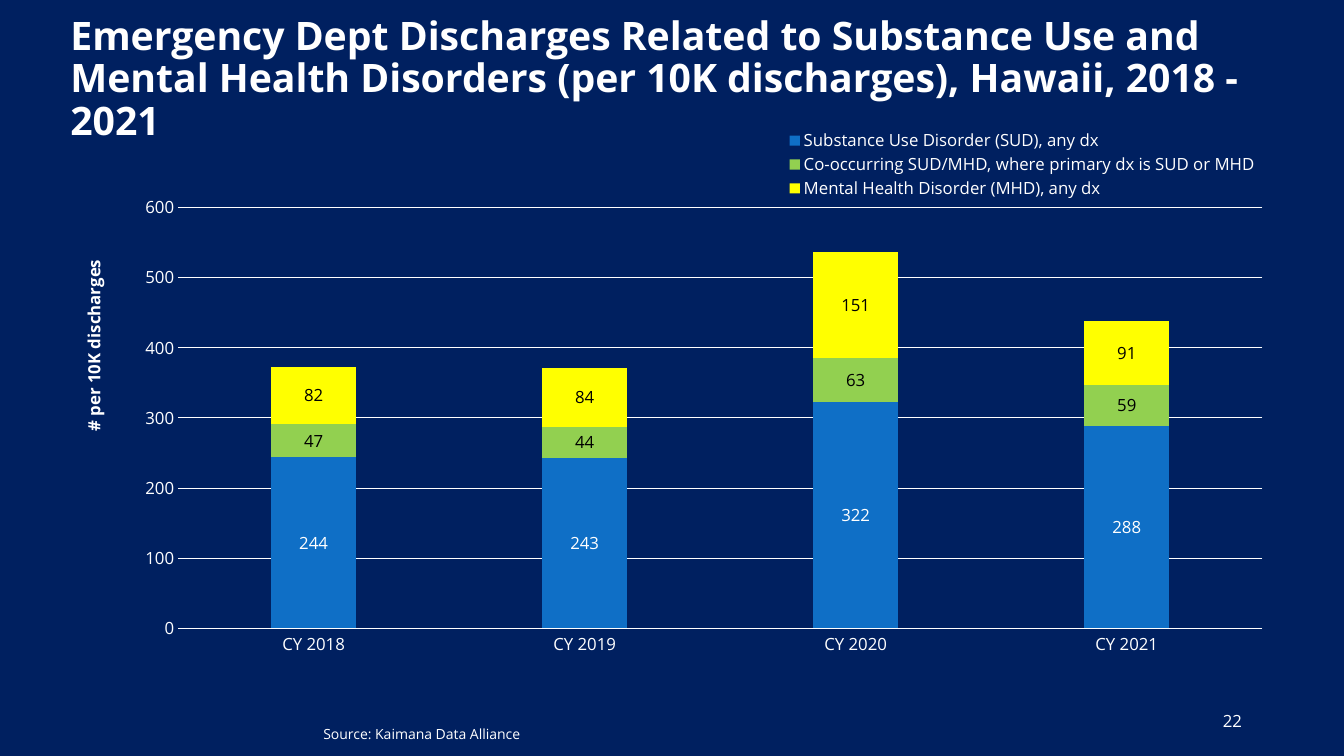
from lxml import etree
from pptx import Presentation
from pptx.chart.data import CategoryChartData
from pptx.dml.color import RGBColor
from pptx.enum.chart import XL_CHART_TYPE, XL_LABEL_POSITION, XL_LEGEND_POSITION, XL_TICK_MARK
from pptx.enum.text import MSO_ANCHOR, MSO_AUTO_SIZE, PP_ALIGN
from pptx.oxml.ns import qn
from pptx.util import Cm, Pt

STACKED = XL_CHART_TYPE.COLUMN_STACKED
CENTER_LABEL = XL_LABEL_POSITION.CENTER
LEGEND_BOTTOM = XL_LEGEND_POSITION.BOTTOM
NO_TICKS = XL_TICK_MARK.NONE
MIDDLE, TOP = MSO_ANCHOR.MIDDLE, MSO_ANCHOR.TOP
NO_FIT = MSO_AUTO_SIZE.NONE
LEFT, RIGHT = PP_ALIGN.LEFT, PP_ALIGN.RIGHT

NAVY = RGBColor(0x00, 0x20, 0x60)
WHITE = RGBColor(0xFF, 0xFF, 0xFF)
BLACK = RGBColor(0x00, 0x00, 0x00)
BLUE = RGBColor(0x0F, 0x6F, 0xC6)
GREEN = RGBColor(0x92, 0xD0, 0x50)
YELLOW = RGBColor(0xFF, 0xFF, 0x00)

YEARS = ["CY 2018", "CY 2019", "CY 2020", "CY 2021"]
# name, values, fill colour, label colour
DISORDERS = [
    ("Substance Use Disorder (SUD), any dx", (244, 243, 322, 288), BLUE, WHITE),
    ("Co-occurring SUD/MHD, where primary dx is SUD or MHD", (47, 44, 63, 59), GREEN, BLACK),
    ("Mental Health Disorder (MHD), any dx", (82, 84, 151, 91), YELLOW, BLACK),
]


def set_layout(element, inner=False, **fractions):
    """Place a chart part by fractions (x, y, w, h) of the chart's size."""
    for old_layout in element.findall(qn("c:layout")):
        element.remove(old_layout)
    layout = etree.Element(qn("c:layout"))
    manual = etree.SubElement(layout, qn("c:manualLayout"))
    if inner:
        etree.SubElement(manual, qn("c:layoutTarget")).set("val", "inner")
    for side in ("x", "y"):
        etree.SubElement(manual, qn(f"c:{side}Mode")).set("val", "edge")
    for side, fraction in fractions.items():
        etree.SubElement(manual, qn(f"c:{side}")).set("val", str(fraction))
    overlay = element.find(qn("c:overlay"))
    if overlay is None:
        element.insert(0, layout)
    else:
        overlay.addprevious(layout)


class SlideBuilder:
    font_name = "Open Sans"

    def __init__(self, presentation):
        self.slide = presentation.slides.add_slide(presentation.slide_layouts[5])
        background = self.slide.background.fill
        background.solid()
        background.fore_color.rgb = NAVY

    def style_font(self, font, size, color=WHITE, bold=False):
        font.name = self.font_name
        font.size = Pt(size)
        font.bold = bold
        font.color.rgb = color

    def fill_text(self, shape, text, size, align, anchor, bold=False):
        frame = shape.text_frame
        frame.text = text
        frame.word_wrap = True
        frame.auto_size = NO_FIT
        frame.vertical_anchor = anchor
        paragraph = frame.paragraphs[0]
        paragraph.alignment = align
        self.style_font(paragraph.runs[0].font, size, bold=bold)
        return paragraph

    def title(self, text, left, top, width, height):
        shape = self.slide.shapes.title
        shape.left, shape.top, shape.width, shape.height = map(Cm, (left, top, width, height))
        self.fill_text(shape, text, 28, LEFT, MIDDLE, bold=True).line_spacing = 0.9

    def text(self, text, left, top, width, height, size, align=LEFT, anchor=TOP):
        shape = self.slide.shapes.add_textbox(*map(Cm, (left, top, width, height)))
        self.fill_text(shape, text, size, align, anchor)

    def stacked_chart(self, left, top, width, height):
        data = CategoryChartData(number_format="0")
        data.categories = YEARS
        for name, values, _, _ in DISORDERS:
            data.add_series(name, values)
        frame = self.slide.shapes.add_chart(STACKED, *map(Cm, (left, top, width, height)), data)
        chart = frame.chart
        chart.has_title = False
        self.style_font(chart.font, 10)
        self.style_series(chart.plots[0])
        self.style_axes(chart)
        chart.has_legend = True
        legend = chart.legend
        legend.position = LEGEND_BOTTOM
        legend.include_in_layout = True
        self.style_font(legend.font, 12)
        set_layout(legend._element, x=0.59, y=0.02, w=0.4, h=0.13)
        plot_area = chart._chartSpace.find(qn("c:chart")).find(qn("c:plotArea"))
        set_layout(plot_area, inner=True, x=0.093, y=0.162, w=0.895, h=0.754)

    def style_series(self, plot):
        plot.gap_width = 219
        plot.overlap = 100
        plot.vary_by_categories = False
        for series, (_, _, color, label_color) in zip(plot.series, DISORDERS):
            series.format.fill.solid()
            series.format.fill.fore_color.rgb = color
            labels = series.data_labels
            labels.show_value = True
            labels.position = CENTER_LABEL
            labels.number_format = "0"
            labels.number_format_is_linked = False
            self.style_font(labels.font, 12, label_color)

    def style_axes(self, chart):
        years, rate = chart.category_axis, chart.value_axis
        for axis in (years, rate):
            axis.major_tick_mark = axis.minor_tick_mark = NO_TICKS
            self.style_font(axis.tick_labels.font, 12)
        rate.minimum_scale, rate.maximum_scale, rate.major_unit = 0, 600, 100
        rate.tick_labels.number_format = "0"
        rate.tick_labels.number_format_is_linked = False
        rate.format.line.fill.background()
        rate.has_major_gridlines = True
        for line in (years.format.line, rate.major_gridlines.format.line):
            line.color.rgb = WHITE
            line.width = Pt(0.75)
        title = rate.axis_title
        title.text_frame.text = "# per 10K discharges"
        self.style_font(title.text_frame.paragraphs[0].runs[0].font, 12, bold=True)
        title.text_frame._txBody.bodyPr.set("rot", "-5400000")
        title.text_frame._txBody.bodyPr.set("vert", "horz")
        set_layout(title._element, x=0.01, y=0.25)


def main():
    presentation = Presentation()
    presentation.slide_width, presentation.slide_height = Cm(33.87), Cm(19.05)
    builder = SlideBuilder(presentation)
    builder.title(
        "Emergency Dept Discharges Related to Substance Use and Mental Health "
        "Disorders (per 10K discharges), Hawaii, 2018 - 2021",
        1.52, 0.18, 30.78, 3.68,
    )
    builder.stacked_chart(1.65, 2.95, 30.53, 14.07)
    builder.text("22", 23.93, 17.65, 7.62, 1.02, 12, RIGHT, MIDDLE)
    builder.text("Source: Kaimana Data Alliance", 7.9, 18.16, 11.58, 0.69, 10)
    presentation.save("out.pptx")


if __name__ == "__main__":
    main()
